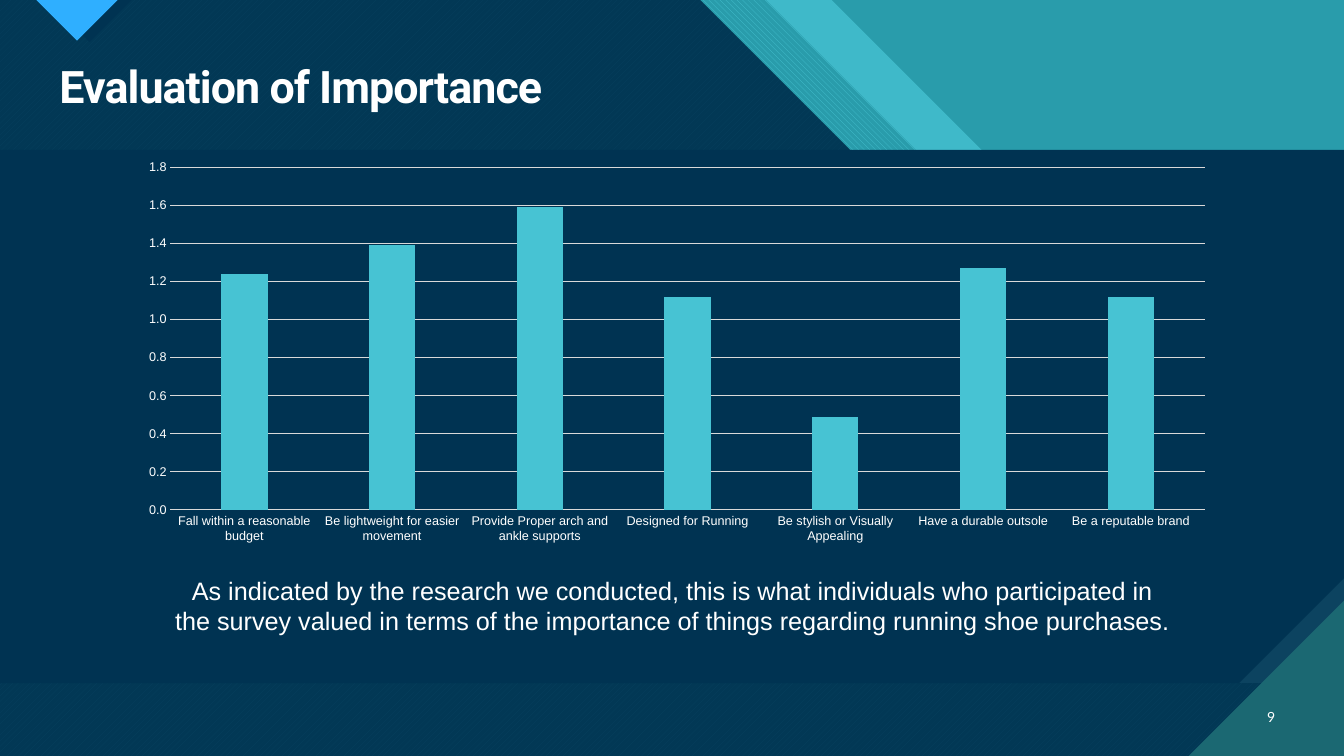
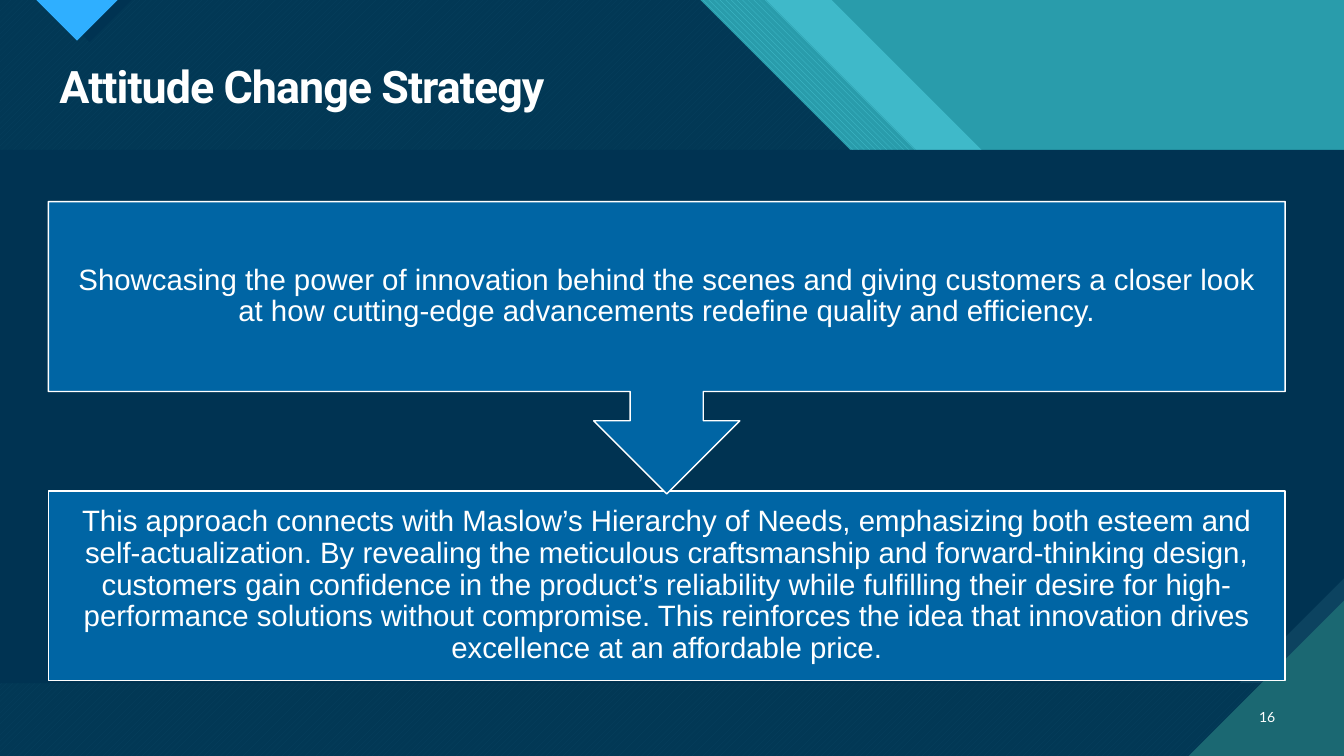
from lxml import etree
from pptx import Presentation
from pptx import util as u
from pptx.chart import data as chart_data
from pptx.dml import color as dml_color
from pptx.enum import chart as chart_enum
from pptx.enum import dml, shapes, text
from pptx.oxml import ns

WIDTH, HEIGHT = 960, 540
NAVY, WHITE, GRID = "003352", "FFFFFF", "D9D9D9"
TEAL, AQUA, DEEP = "299CAB", "47C3D3", "1B6872"
STRIPE, EDGE, SKY, BLUE = "3FB9C9", "0C4360", "2FAFFF", "0065A4"

PANEL_TOP, PANEL_BOTTOM, SNIP = 106.56, 488.16, 75.18
CORNER = 111
BEND = 214

TITLE_BOX = (35.28, 42.48, 882.72, 42.48)
NUMBER_BOX = (886.32, 497.52, 31.68, 28.8)
CHART_BOX = (90.72, 108.72, 785.52, 285.12)
CAPTION_BOX = (116.64, 407.52, 727.2, 51.12)
CALLOUT_BOX = (34.56, 144, 883.44, 208.8)
RESULT_BOX = (34.56, 350.64, 883.44, 135.36)

IMPORTANCE = [
    ("Fall within a reasonable budget", 1.24),
    ("Be lightweight for easier movement", 1.39),
    ("Provide Proper arch and ankle supports", 1.59),
    ("Designed for Running", 1.12),
    ("Be stylish or Visually Appealing", 0.49),
    ("Have a durable outsole", 1.27),
    ("Be a reputable brand", 1.12),
]
CAPTION = (
    "As indicated by the research we conducted, this is what individuals who participated in "
    "the survey valued in terms of the importance of things regarding running shoe purchases."
)
STRATEGY = [
    (
        shapes.MSO_SHAPE.RECTANGLE,
        RESULT_BOX,
        "This approach connects with Maslow’s Hierarchy of Needs, emphasizing both esteem and "
        "self-actualization. By revealing the meticulous craftsmanship and forward-thinking design, "
        "customers gain confidence in the product’s reliability while fulfilling their desire for "
        "high-performance solutions without compromise. This reinforces the idea that innovation "
        "drives excellence at an affordable price.",
    ),
    (
        shapes.MSO_SHAPE.DOWN_ARROW_CALLOUT,
        CALLOUT_BOX,
        "Showcasing the power of innovation behind the scenes and giving customers a closer look "
        "at how cutting-edge advancements redefine quality and efficiency.",
    ),
]


def rgb(value):
    return dml_color.RGBColor.from_string(value)


def points(values):
    return [u.Pt(value) for value in values]


def paint(fill, color, pattern=None, back=None, alpha=None):
    if pattern:
        fill.patterned()
        fill.pattern = pattern
        fill.back_color.rgb = rgb(back)
    else:
        fill.solid()
    fill.fore_color.rgb = rgb(color)


def write(frame, words, size=18, font="Arial", bold=False, align=text.PP_ALIGN.CENTER,
          anchor=text.MSO_ANCHOR.TOP, spacing=None, tracking=None, inset=None):
    frame.word_wrap = True
    frame.auto_size = text.MSO_AUTO_SIZE.NONE
    frame.vertical_anchor = anchor
    if inset is not None:
        frame.margin_left = frame.margin_right = u.Pt(inset)
        frame.margin_top = frame.margin_bottom = u.Pt(inset)
    para = frame.paragraphs[0]
    para.alignment = align
    if spacing:
        para.line_spacing = spacing
    span = para.add_run()
    span.text = words
    span.font.size = u.Pt(size)
    span.font.name = font
    span.font.bold = bold
    span.font.color.rgb = rgb(WHITE)
    if tracking:
        span.font._element.set("spc", str(tracking))


def add_polygon(page, corners, color, alpha=None, **pattern):
    builder = page.shapes.build_freeform(*corners[0], scale=u.Pt(1))
    builder.add_line_segments(corners[1:], close=True)
    shape = builder.convert_to_shape()
    shape.shadow.inherit = False
    shape.line.fill.background()
    paint(shape.fill, color, **pattern)
    if alpha:
        tint = shape.element.spPr.find(ns.qn("a:solidFill"))[0]
        etree.SubElement(tint, ns.qn("a:alpha")).set("val", str(alpha * 1000))
    return shape


def slanted(left):
    return [(0, 0), (left, 0), (left + BEND, BEND), (WIDTH, BEND), (WIDTH, HEIGHT), (0, HEIGHT)]


def pointer(left, depth):
    return [(left, 0), (left + depth, depth), (left + 2 * depth, 0)]


def decorate(layout, page):
    paint(layout.background.fill, TEAL)
    down = dml.MSO_PATTERN.WIDE_DOWNWARD_DIAGONAL
    up = dml.MSO_PATTERN.WIDE_UPWARD_DIAGONAL
    panel = [(0, PANEL_TOP), (WIDTH, PANEL_TOP), (WIDTH, PANEL_BOTTOM - SNIP),
             (WIDTH - SNIP, PANEL_BOTTOM), (0, PANEL_BOTTOM)]
    panel_edge = panel[:2] + [(WIDTH, PANEL_BOTTOM), (0, PANEL_BOTTOM)]
    corner = [(WIDTH - CORNER, HEIGHT), (WIDTH, HEIGHT), (WIDTH, HEIGHT - CORNER)]
    parts = [
        (slanted(594), STRIPE, {}),
        (slanted(547.2), AQUA, {"pattern": down, "back": TEAL}),
        (slanted(500.4), AQUA, {"pattern": up, "back": DEEP}),
        (slanted(500.4), NAVY, {"alpha": 90}),
        (pointer(34.8, 29.6), NAVY, {}),
        (pointer(26.4, 29), SKY, {}),
        (panel_edge, EDGE, {}),
        (panel, NAVY, {}),
        (corner, DEEP, {}),
    ]
    drawn = [add_polygon(page, corners, color, **style) for corners, color, style in parts]
    for holder in list(layout.placeholders):
        if holder.placeholder_format.type == shapes.PP_PLACEHOLDER.TITLE:
            holder.left, holder.top, holder.width, holder.height = points(TITLE_BOX)
        else:
            holder.element.getparent().remove(holder.element)
    for index, shape in enumerate(drawn, 2):
        layout.shapes.element.insert(index, shape.element)


def add_text(page, box, words, **style):
    write(page.shapes.add_textbox(*points(box)).text_frame, words, **style)


def add_page(deck, layout, title, number):
    page = deck.slides.add_slide(layout)
    write(page.shapes.title.text_frame, title, size=32, font="Roboto", bold=True,
          align=text.PP_ALIGN.LEFT, spacing=0.9, tracking=-70)
    add_text(page, NUMBER_BOX, number, size=10, font="Lato",
             align=text.PP_ALIGN.RIGHT, anchor=text.MSO_ANCHOR.MIDDLE)
    return page


def style_line(line, color):
    line.color.rgb = rgb(color)
    line.width = u.Pt(0.75)


def add_importance_chart(page):
    values = chart_data.CategoryChartData()
    values.categories = [name for name, _ in IMPORTANCE]
    values.add_series("Series 1", [value for _, value in IMPORTANCE])
    kind = chart_enum.XL_CHART_TYPE.COLUMN_CLUSTERED
    chart = page.shapes.add_chart(kind, *points(CHART_BOX), values).chart
    chart.has_title = chart.has_legend = False
    chart.font.name = "Arial"
    chart.font.size = u.Pt(10)
    plot = chart.plots[0]
    plot.gap_width, plot.overlap = 219, -27
    plot.vary_by_categories = False
    paint(plot.series[0].format.fill, AQUA)
    for axis in (chart.category_axis, chart.value_axis):
        axis.major_tick_mark = axis.minor_tick_mark = chart_enum.XL_TICK_MARK.NONE
        font = axis.tick_labels.font
        font.name, font.size = "Arial", u.Pt(9)
        font.color.rgb = rgb(WHITE)
    style_line(chart.category_axis.format.line, GRID)
    scale = chart.value_axis
    scale.minimum_scale, scale.maximum_scale, scale.major_unit = 0, 1.8, 0.2
    scale.format.line.fill.background()
    scale.has_major_gridlines = True
    style_line(scale.major_gridlines.format.line, GRID)
    scale.tick_labels.number_format = "0.0"
    scale.tick_labels.number_format_is_linked = False


def add_strategy_box(page, kind, box, words):
    shape = page.shapes.add_shape(kind, *points(box))
    shape.shadow.inherit = False
    paint(shape.fill, BLUE)
    shape.line.color.rgb = rgb(WHITE)
    shape.line.width = u.Pt(1)
    write(shape.text_frame, words, size=21, spacing=0.9, inset=11.52,
          anchor=text.MSO_ANCHOR.MIDDLE)


def main():
    deck = Presentation()
    deck.slide_width, deck.slide_height = points((WIDTH, HEIGHT))
    layout = deck.slide_layouts.get_by_name("Title Only")

    page = add_page(deck, layout, "Evaluation of Importance", "9")
    decorate(layout, page)
    add_importance_chart(page)
    add_text(page, CAPTION_BOX, CAPTION)

    page = add_page(deck, layout, "Attitude Change Strategy", "16")
    for kind, box, words in STRATEGY:
        add_strategy_box(page, kind, box, words)

    deck.save("out.pptx")


if __name__ == "__main__":
    main()
